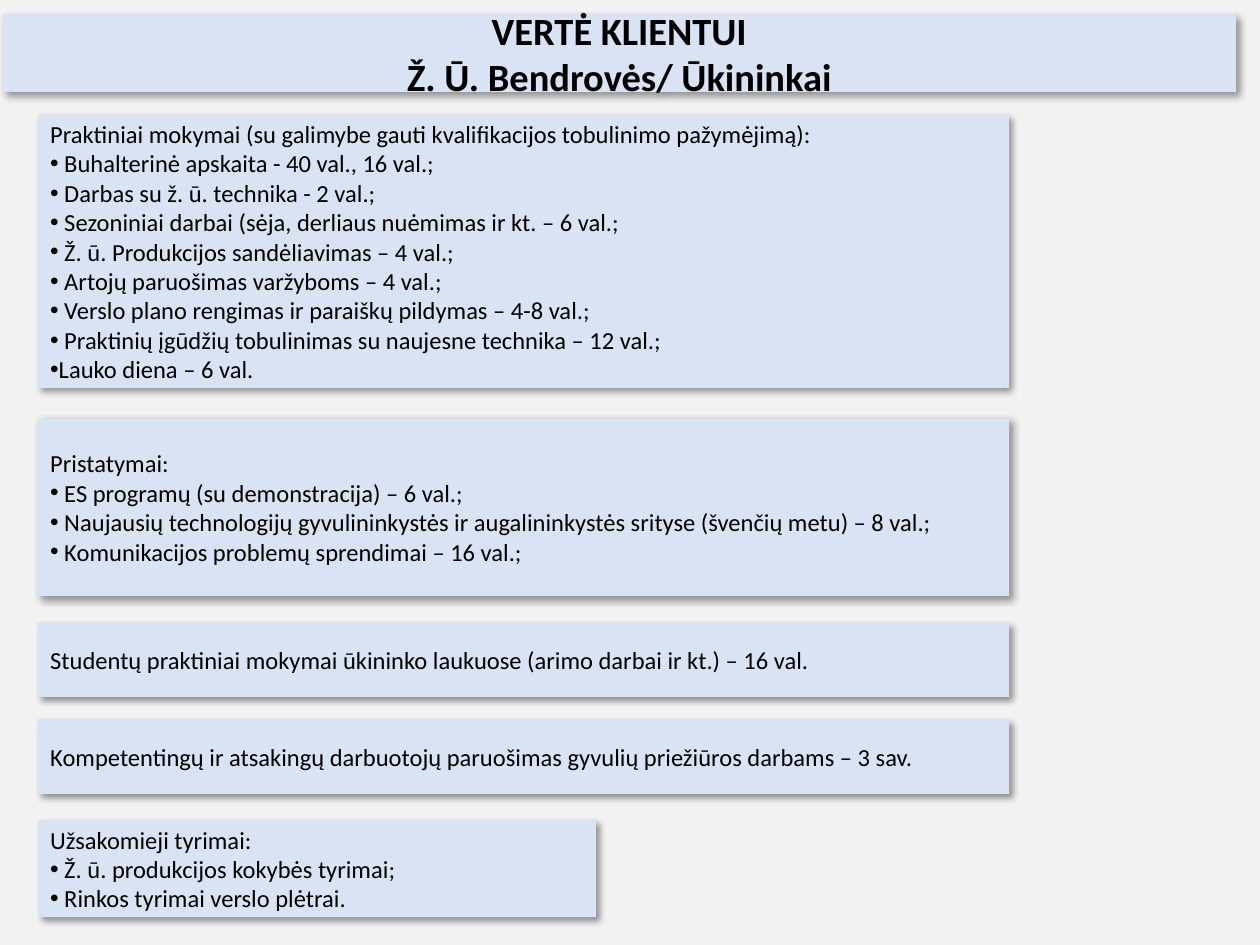
from lxml import etree
from pptx import Presentation
from pptx.dml.color import RGBColor
from pptx.enum.shapes import MSO_SHAPE
from pptx.enum.text import MSO_ANCHOR, PP_ALIGN
from pptx.oxml.ns import qn
from pptx.util import Inches, Pt

RECT = MSO_SHAPE.RECTANGLE
MIDDLE = MSO_ANCHOR.MIDDLE
LEFT, CENTER = PP_ALIGN.LEFT, PP_ALIGN.CENTER
GREY = RGBColor(0xF2, 0xF2, 0xF2)
BLUE = RGBColor(0xDA, 0xE3, 0xF3)
BLACK = RGBColor(0, 0, 0)
EDGE, WIDE = 0.3, 7.71


def add_shadow(shape):
    """Soft black shadow falling to the lower right."""
    shape.shadow.inherit = False
    effects = shape.element.spPr.find(qn("a:effectLst"))
    outer = etree.SubElement(effects, qn("a:outerShdw"), blurRad=str(Pt(4)),
                             dist=str(Pt(3)), dir=str(45 * 60000),
                             algn="tl", rotWithShape="0")
    color = etree.SubElement(outer, qn("a:srgbClr"), val="000000")
    etree.SubElement(color, qn("a:alpha"), val="40000")


def add_panel(left, top, width, height, lines, size=14, title=False):
    """Shaded box; in a body panel every line after the first is a bullet."""
    panel = slide.shapes.add_shape(RECT, Inches(left), Inches(top),
                                   Inches(width), Inches(height))
    panel.fill.solid()
    panel.fill.fore_color.rgb = BLUE
    panel.line.fill.background()
    add_shadow(panel)
    frame = panel.text_frame
    frame.word_wrap = True
    frame.vertical_anchor = MIDDLE
    frame.text = "\n".join(lines)
    for i, para in enumerate(frame.paragraphs):
        para.alignment = CENTER if title else LEFT
        if i and not title:
            props = para._p.get_or_add_pPr()
            etree.SubElement(props, qn("a:buFont"), typeface="Arial")
            etree.SubElement(props, qn("a:buChar"), char="•")
        for run in para.runs:
            run.font.name = "Calibri"
            run.font.size = Pt(size)
            run.font.bold = title
            run.font.color.rgb = BLACK


prs = Presentation()
prs.slide_width, prs.slide_height = Inches(10), Inches(7.5)
slide = prs.slides.add_slide(prs.slide_layouts[6])
slide.background.fill.solid()
slide.background.fill.fore_color.rgb = GREY

add_panel(0.02, 0.11, 9.79, 0.62,
          ["VERTĖ KLIENTUI", "Ž. Ū. Bendrovės/ Ūkininkai"], 22, True)

panels = [
    (0.91, WIDE, 2.17, [
        "Praktiniai mokymai (su galimybe gauti kvalifikacijos tobulinimo pažymėjimą):",
        " Buhalterinė apskaita - 40 val., 16 val.;",
        " Darbas su ž. ū. technika - 2 val.;",
        " Sezoniniai darbai (sėja, derliaus nuėmimas ir kt. – 6 val.;",
        " Ž. ū. Produkcijos sandėliavimas – 4 val.;",
        " Artojų paruošimas varžyboms – 4 val.;",
        " Verslo plano rengimas ir paraiškų pildymas – 4-8 val.;",
        " Praktinių įgūdžių tobulinimas su naujesne technika – 12 val.;",
        "Lauko diena – 6 val."]),
    (3.32, WIDE, 1.41, [
        "Pristatymai:",
        " ES programų (su demonstracija) – 6 val.;",
        " Naujausių technologijų gyvulininkystės ir augalininkystės srityse (švenčių metu) – 8 val.;",
        " Komunikacijos problemų sprendimai – 16 val.;"]),
    (4.94, WIDE, 0.59, [
        "Studentų praktiniai mokymai ūkininko laukuose (arimo darbai ir kt.) – 16 val."]),
    (5.71, WIDE, 0.59, [
        "Kompetentingų ir atsakingų darbuotojų paruošimas gyvulių priežiūros darbams – 3 sav."]),
    (6.51, 4.43, 0.77, [
        "Užsakomieji tyrimai:",
        " Ž. ū. produkcijos kokybės tyrimai;",
        " Rinkos tyrimai verslo plėtrai."]),
]
for top, width, height, lines in panels:
    add_panel(EDGE, top, width, height, lines)

prs.save("out.pptx")
